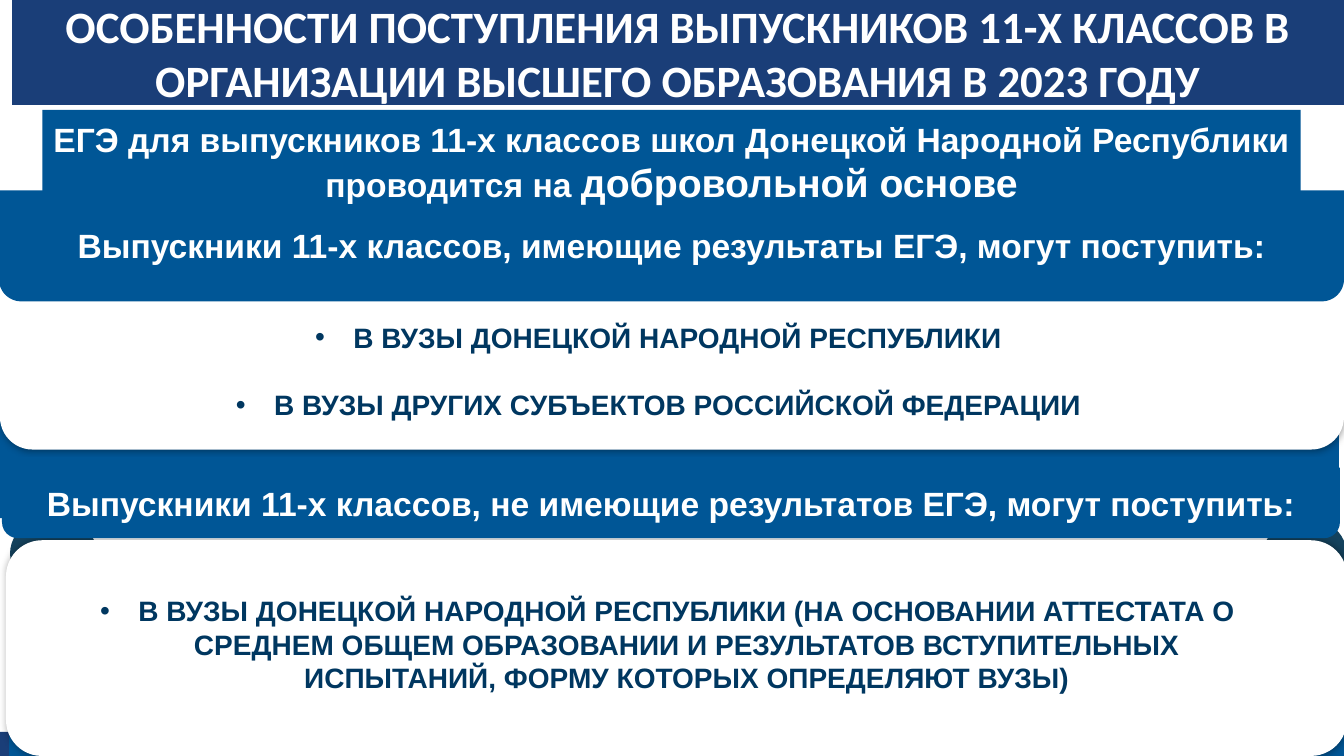
import pptx
import pptx.util
import pptx.dml.color
import pptx.enum.shapes
import pptx.enum.text
import pptx.oxml
import pptx.oxml.ns
import lxml.etree

Inches, Pt = pptx.util.Inches, pptx.util.Pt
MSO = pptx.enum.shapes.MSO_SHAPE
NAVY, BLUE, DARK, INK, WHITE = "1A3E78", "005696", "14425D", "003760", "FFFFFF"

prs = pptx.Presentation()
prs.slide_width, prs.slide_height = Inches(13.33), Inches(7.5)
s = prs.slides.add_slide(prs.slide_layouts[6])


def block(kind, x, y, w, h, fill):
    sp = s.shapes.add_shape(kind, Inches(x), Inches(y), Inches(w), Inches(h))
    sp.shadow.inherit = False
    sp.fill.solid()
    sp.fill.fore_color.rgb = pptx.dml.color.RGBColor.from_string(fill)
    sp.line.fill.background()
    return sp


def write(p, text, size, color, font="Arial"):
    p.alignment = pptx.enum.text.PP_ALIGN.CENTER
    r = p.add_run()
    r.text = text
    r.font.name, r.font.size, r.font.bold = font, Pt(size), True
    r.font.color.rgb = pptx.dml.color.RGBColor.from_string(color)


# Coloured backing, cards and banners from back to front;
# a banner also has a corner radius and its text runs
layers = [
    (MSO.RECTANGLE, 0, 4.08, 13.28, 1.06, BLUE, None, []),
    (MSO.ROUNDED_RECTANGLE, 0, 2.52, 13.33, 1.94, WHITE, None, []),
    (MSO.ROUND_2_SAME_RECTANGLE, -0.01, 1.89, 13.34, 1.1, BLUE, 0.22,
     [("Выпускники 11-х классов, имеющие результаты ЕГЭ, могут поступить:", 24)]),
    (MSO.RECTANGLE, 0, 7.26, 13.33, 0.24, NAVY, None, []),
    (MSO.RECTANGLE, 0.09, 5.93, 13.24, 1.57, BLUE, None, []),
    (MSO.OVAL, 0.1, 5.12, 0.86, 0.74, DARK, None, []),
    (MSO.OVAL, 12.53, 5.13, 0.83, 0.75, DARK, None, []),
    (MSO.ROUNDED_RECTANGLE, 0.06, 5.36, 13.3, 2.14, WHITE, None, []),
    (MSO.ROUND_2_SAME_RECTANGLE, 0.02, 4.64, 13.27, 0.7, BLUE, 0.16,
     [("Выпускники 11-х классов, не имеющие результатов ЕГЭ, могут поступить:", 24)]),
    (MSO.ROUND_2_SAME_RECTANGLE, 0.42, 1.09, 12.48, 1.04, BLUE, 0.18,
     [("ЕГЭ для выпускников 11-х классов школ Донецкой Народной Республики "
       "проводится на ", 24), ("добровольной основе", 28)]),
]
for kind, x, y, w, h, fill, radius, runs in layers:
    sp = block(kind, x, y, w, h, fill)
    if kind == MSO.ROUNDED_RECTANGLE:
        # Soft glow-like shadow around the card
        effects = sp._element.spPr.find(pptx.oxml.ns.qn("a:effectLst"))
        effects.append(pptx.oxml.parse_xml(
            '<a:outerShdw xmlns:a="http://schemas.openxmlformats.org/drawingml/2006/main" '
            'blurRad="63500" dist="0" dir="0" rotWithShape="0">'
            '<a:srgbClr val="000000"><a:alpha val="40000"/></a:srgbClr></a:outerShdw>'))
    if radius:
        sp.adjustments[0], sp.adjustments[1] = 0, radius / h
        tf = sp.text_frame
        tf.word_wrap = True
        tf.vertical_anchor = pptx.enum.text.MSO_ANCHOR.MIDDLE
        tf.margin_left = tf.margin_right = Inches(0.04)
        tf.margin_bottom = 0
        for text, size in runs:
            write(tf.paragraphs[0], text, size, WHITE)

# Title
sp = block(MSO.RECTANGLE, 0.12, 0, 13.21, 1.04, NAVY)
tf = sp.text_frame
tf.word_wrap = True
tf.vertical_anchor = pptx.enum.text.MSO_ANCHOR.MIDDLE
write(tf.paragraphs[0], "ОСОБЕННОСТИ ПОСТУПЛЕНИЯ ВЫПУСКНИКОВ 11-Х КЛАССОВ В "
      "ОРГАНИЗАЦИИ ВЫСШЕГО ОБРАЗОВАНИЯ В 2023 ГОДУ", 32, WHITE, "Calibri")

# Bulleted lists on the cards
lists = [
    (0.38, 3.13, 12.3, ["В ВУЗЫ ДОНЕЦКОЙ НАРОДНОЙ РЕСПУБЛИКИ",
                        "В ВУЗЫ ДРУГИХ СУБЪЕКТОВ РОССИЙСКОЙ ФЕДЕРАЦИИ"]),
    (0.59, 5.84, 12.06, ["В ВУЗЫ ДОНЕЦКОЙ НАРОДНОЙ РЕСПУБЛИКИ (НА ОСНОВАНИИ АТТЕСТАТА О "
                         "СРЕДНЕМ ОБЩЕМ ОБРАЗОВАНИИ И РЕЗУЛЬТАТОВ ВСТУПИТЕЛЬНЫХ "
                         "ИСПЫТАНИЙ, ФОРМУ КОТОРЫХ ОПРЕДЕЛЯЮТ ВУЗЫ)"]),
]
for x, y, w, items in lists:
    tf = s.shapes.add_textbox(Inches(x), Inches(y), Inches(w), Inches(1.11)).text_frame
    tf.word_wrap = True
    for i, item in enumerate(items):
        p = tf.add_paragraph() if i else tf.paragraphs[0]
        p.space_before = Pt(24 if i else 0)
        write(p, item, 20, INK)
        pPr = p._p.get_or_add_pPr()
        pPr.set("marL", str(Inches(0.38)))
        pPr.set("indent", str(-Inches(0.38)))
        font = lxml.etree.SubElement(pPr, pptx.oxml.ns.qn("a:buFont"))
        font.set("typeface", "Arial")
        bullet = lxml.etree.SubElement(pPr, pptx.oxml.ns.qn("a:buChar"))
        bullet.set("char", "•")

prs.save("out.pptx")
